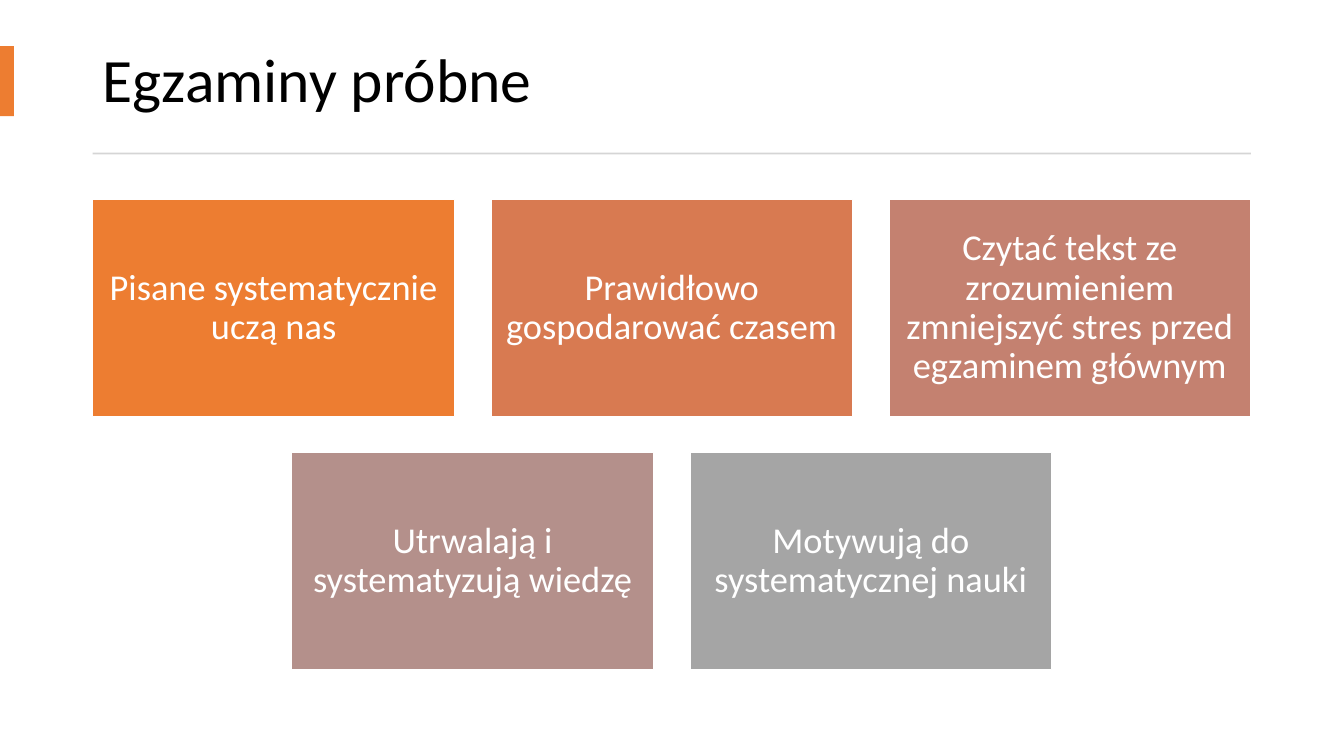
from dataclasses import dataclass

from pptx import Presentation
from pptx.dml.color import RGBColor
from pptx.enum.shapes import MSO_SHAPE
from pptx.enum.text import MSO_ANCHOR, MSO_AUTO_SIZE, PP_ALIGN
from pptx.util import Pt

RECT = MSO_SHAPE.RECTANGLE
MIDDLE = MSO_ANCHOR.MIDDLE
LEFT, CENTER = PP_ALIGN.LEFT, PP_ALIGN.CENTER
NO_FIT = MSO_AUTO_SIZE.NONE
TITLE_ONLY = 5


@dataclass(frozen=True)
class Theme:
    font: str = "Calibri"
    title_size: int = 44
    card_size: int = 26
    ink: str = "000000"
    paper: str = "FFFFFF"
    accent: str = "ED7D31"
    rule: str = "D5D5D5"


THEME = Theme()

# Content area and card grid, in points
EDGE, WIDTH = 66.24, 827.28
TOP, GAP = 142.6, 25.9
CARD_W, CARD_H = (WIDTH - 2 * GAP) / 3, 154.8
INSET = 7.9

ROWS = [
    [
        ("Pisane systematycznie uczą nas", THEME.accent),
        ("Prawidłowo gospodarować czasem", "D87A51"),
        ("Czytać tekst ze zrozumieniem zmniejszyć stres przed egzaminem głównym",
         "C48170"),
    ],
    [
        ("Utrwalają i systematyzują wiedzę", "B4908B"),
        ("Motywują do systematycznej nauki", "A5A5A5"),
    ],
]


def set_text(frame, text, size, color, align):
    frame.text = text
    frame.word_wrap = True
    frame.auto_size = NO_FIT
    frame.vertical_anchor = MIDDLE
    para = frame.paragraphs[0]
    para.alignment = align
    para.line_spacing = 0.9
    font = para.runs[0].font
    font.name = THEME.font
    font.size = Pt(size)
    font.color.rgb = RGBColor.from_string(color)


def add_title(slide, text):
    title = slide.shapes.title
    title.left, title.top = Pt(EDGE), Pt(19.4)
    title.width, title.height = Pt(WIDTH), Pt(79.2)
    set_text(title.text_frame, text, THEME.title_size, THEME.ink, LEFT)


def add_bar(slide, left, top, width, height, color):
    """Add a plain filled rectangle without outline."""
    bar = slide.shapes.add_shape(RECT, Pt(left), Pt(top), Pt(width), Pt(height))
    bar.shadow.inherit = False
    bar.fill.solid()
    bar.fill.fore_color.rgb = RGBColor.from_string(color)
    bar.line.fill.background()
    return bar


def add_card(slide, left, top, text, color):
    card = add_bar(slide, left, top, CARD_W, CARD_H, color)
    card.line.color.rgb = RGBColor.from_string(THEME.paper)
    card.line.width = Pt(1)
    frame = card.text_frame
    frame.margin_left = frame.margin_right = Pt(INSET)
    frame.margin_top = frame.margin_bottom = Pt(INSET)
    set_text(frame, text, THEME.card_size, THEME.paper, CENTER)


def add_cards(slide, rows):
    """Lay out each row of cards centred in the content area."""
    for i, row in enumerate(rows):
        span = len(row) * (CARD_W + GAP) - GAP
        start = EDGE + (WIDTH - span) / 2
        top = TOP + i * (CARD_H + GAP)
        for j, (text, color) in enumerate(row):
            add_card(slide, start + j * (CARD_W + GAP), top, text, color)


def main():
    deck = Presentation()
    deck.slide_width, deck.slide_height = Pt(960), Pt(540)
    slide = deck.slides.add_slide(deck.slide_layouts[TITLE_ONLY])
    add_title(slide, "Egzaminy próbne")
    add_bar(slide, 0, 33, 10, 50, THEME.accent)
    add_bar(slide, EDGE, 109, WIDTH, 1.4, THEME.rule)
    add_cards(slide, ROWS)
    deck.save("out.pptx")


if __name__ == "__main__":
    main()
